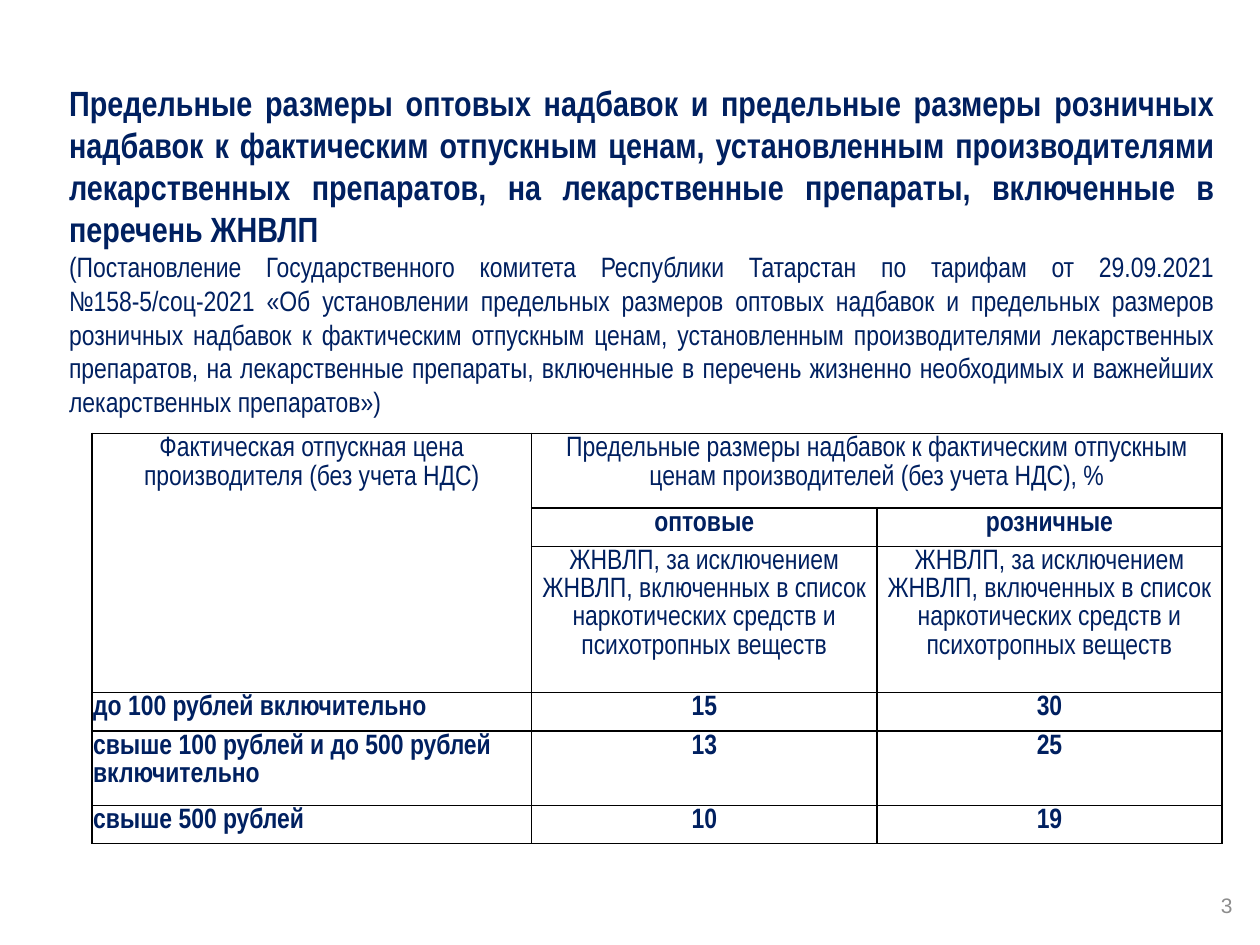
from pptx import Presentation
from pptx.dml.color import RGBColor
from pptx.enum.text import MSO_ANCHOR, MSO_AUTO_SIZE, PP_ALIGN as Align
from pptx.oxml import parse_xml
from pptx.oxml.ns import nsdecls
from pptx.util import Inches, Pt

NAVY, GRAY, WHITE, BLACK = "002060", "8C8C8C", "FFFFFF", "000000"

TITLE = (
    "Предельные размеры оптовых надбавок и предельные размеры розничных надбавок "
    "к фактическим отпускным ценам, установленным производителями лекарственных "
    "препаратов, на лекарственные препараты, включенные в перечень ЖНВЛП"
)
DECREE = (
    "(Постановление Государственного комитета Республики Татарстан по тарифам "
    "от 29.09.2021 №158-5/соц-2021 «Об установлении предельных размеров оптовых "
    "надбавок и предельных размеров розничных надбавок к фактическим отпускным "
    "ценам, установленным производителями лекарственных препаратов, на лекарственные "
    "препараты, включенные в перечень жизненно необходимых и важнейших "
    "лекарственных препаратов»)"
)
SCOPE = (
    "ЖНВЛП, за исключением ЖНВЛП, включенных в список наркотических средств и "
    "психотропных веществ"
)
MARKUPS = [
    ["Фактическая отпускная цена производителя (без учета НДС)",
     "Предельные размеры надбавок к фактическим отпускным ценам "
     "производителей (без учета НДС), %", None],
    [None, "оптовые", "розничные"],
    [None, SCOPE, SCOPE],
    ["до 100 рублей включительно", "15", "30"],
    ["свыше 100 рублей и до 500 рублей включительно", "13", "25"],
    ["свыше 500 рублей", "10", "19"],
]
BOLD_ROWS = (1, 3, 4, 5)
FIRST_PRICE_ROW = 3
COLUMN_WIDTHS = (3.49, 2.74, 2.74)
ROW_HEIGHTS = (0.59, 0.3, 1.15, 0.3, 0.59, 0.3)


def color(value):
    return RGBColor.from_string(value)


class SlideBuilder:
    font = "Arial Narrow"

    def __init__(self, page):
        self.page = page

    def style(self, para, size, bold=False, align=Align.LEFT, ink=NAVY, font=None):
        para.alignment = align
        para.font.name = font or self.font
        para.font.size = Pt(size)
        para.font.bold = bold
        para.font.color.rgb = color(ink)

    def text(self, left, top, width, height, paragraphs, anchor=MSO_ANCHOR.TOP, grow=False):
        """Add a text box; paragraphs holds pairs of wording and style options."""
        box = self.page.shapes.add_textbox(
            Inches(left), Inches(top), Inches(width), Inches(height))
        frame = box.text_frame
        frame.word_wrap = True
        frame.vertical_anchor = anchor
        if grow:
            frame.auto_size = MSO_AUTO_SIZE.SHAPE_TO_FIT_TEXT
        for index, (wording, options) in enumerate(paragraphs):
            para = frame.add_paragraph() if index else frame.paragraphs[0]
            para.text = wording
            self.style(para, **options)

    def borders(self, cell):
        """Draw 1 pt lines on all four sides, placed ahead of the cell fill."""
        properties = cell._tc.get_or_add_tcPr()
        for position, side in enumerate(("lnL", "lnR", "lnT", "lnB")):
            properties.insert(position, parse_xml(
                f'<a:{side} {nsdecls("a")} w="12700"><a:solidFill>'
                f'<a:srgbClr val="{BLACK}"/></a:solidFill></a:{side}>'))

    def table(self, left, top, widths, heights, rows, merges):
        grid = self.page.shapes.add_table(
            len(rows), len(widths), Inches(left), Inches(top),
            Inches(sum(widths)), Inches(sum(heights))).table
        grid.first_row = grid.horz_banding = False
        for column, width in zip(grid.columns, widths):
            column.width = Inches(width)
        for row, height in zip(grid.rows, heights):
            row.height = Inches(height)
        for first, last in merges:
            grid.cell(*first).merge(grid.cell(*last))
        for r, row in enumerate(rows):
            for c, wording in enumerate(row):
                cell = grid.cell(r, c)
                cell.margin_left = cell.margin_right = Inches(0.01)
                cell.margin_top = cell.margin_bottom = Inches(0.01)
                cell.fill.solid()
                cell.fill.fore_color.rgb = color(WHITE)
                self.borders(cell)
                para = cell.text_frame.paragraphs[0]
                para.text = wording or ""
                para.line_spacing = 1.07
                is_price = c == 0 and r >= FIRST_PRICE_ROW
                self.style(para, 16, r in BOLD_ROWS,
                           Align.LEFT if is_price else Align.CENTER)


def main():
    deck = Presentation()
    deck.slide_width, deck.slide_height = Inches(10), Inches(7.5)
    builder = SlideBuilder(deck.slides.add_slide(deck.slide_layouts[6]))
    builder.text(9.47, 6.98, 0.41, 0.4, [
        ("3", dict(size=12, align=Align.RIGHT, ink=GRAY, font="Arial")),
    ], anchor=MSO_ANCHOR.MIDDLE)
    builder.text(0.45, 0.6, 9.29, 2.79, [
        (TITLE, dict(size=20, bold=True, align=Align.JUSTIFY)),
        (DECREE, dict(size=16, align=Align.JUSTIFY)),
    ], grow=True)
    builder.table(0.73, 3.44, COLUMN_WIDTHS, ROW_HEIGHTS, MARKUPS,
                  merges=[((0, 0), (2, 0)), ((0, 1), (0, 2))])
    deck.save("out.pptx")


if __name__ == "__main__":
    main()
